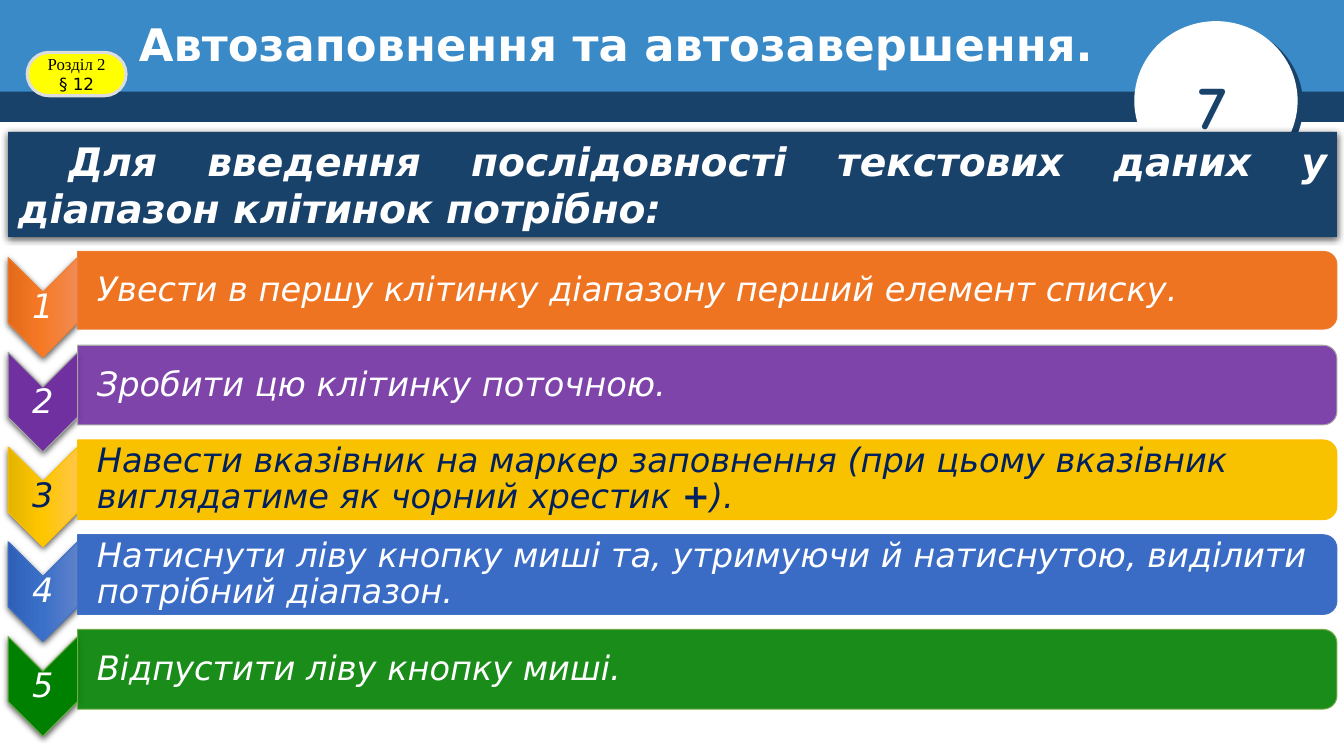
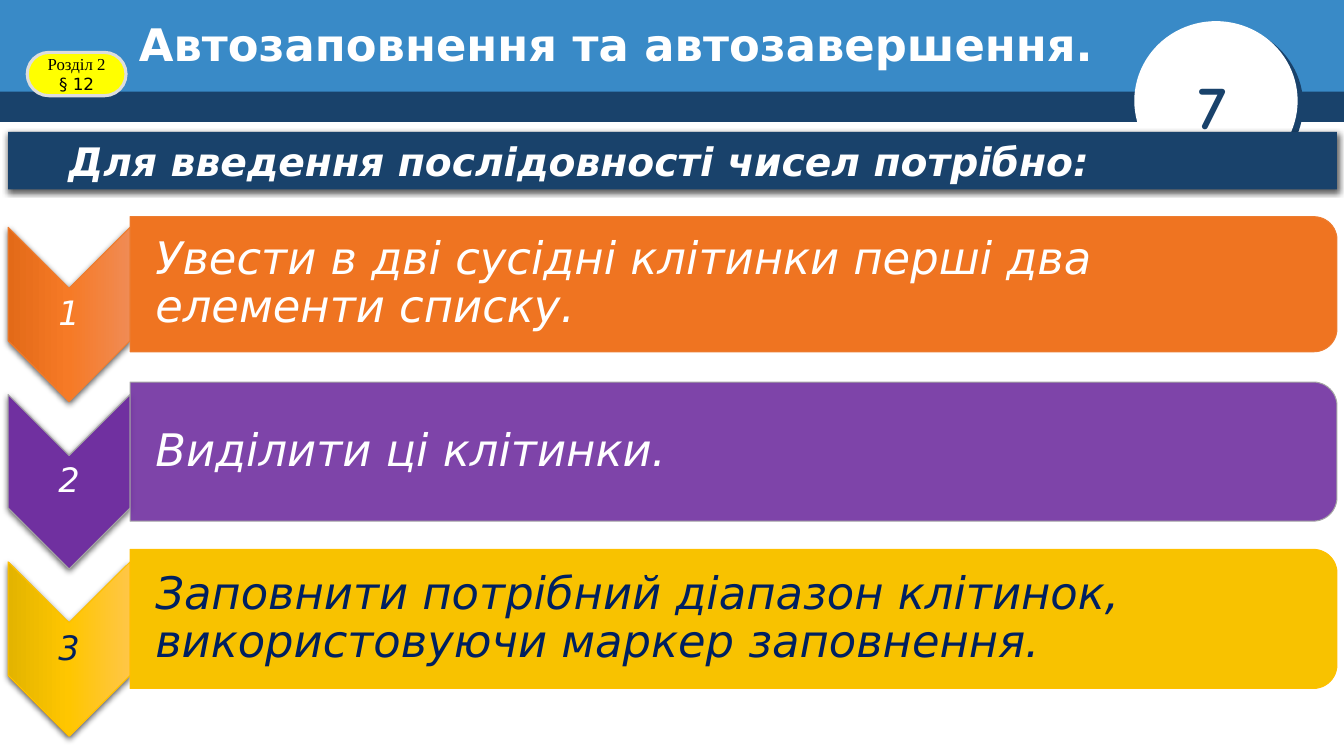
import copy

import lxml.etree
import pptx
import pptx.dml.color
import pptx.enum.shapes
import pptx.enum.text
import pptx.oxml.ns
import pptx.util

Inches = pptx.util.Inches
Pt = pptx.util.Pt
qn = pptx.oxml.ns.qn
rgb = pptx.dml.color.RGBColor.from_string
SHAPE = pptx.enum.shapes.MSO_SHAPE
ALIGN = pptx.enum.text.PP_ALIGN
ANCHOR = pptx.enum.text.MSO_ANCHOR


class Theme:
    navy, blue, white, black = "19426B", "398AC7", "FFFFFF", "000000"
    badge, badge_edge, dark_text = "FFFF00", "DDDDDD", "002060"
    sans, serif, number_face = "DejaVu Sans", "Times New Roman", "Comic Neue"
    title, heading, step_number, badge_text, slide_number = 32, 28, 24, 12, 44
    # colour, opacity %, blur pt, distance pt, direction in degrees
    soft_shadow = (black, 63, 4.5, 1.5, 90)
    circle_shadow = (navy, 100, 0, 5, 37)
    # arrow colours, bar colour, bar opacity %, edge, text
    steps = [
        (("F08B54", "F67A26", "E36A18"), "EF7421", 100, "ED7D31", white),
        (("7030A0",), "7030A0", 90, "A5A5A5", white),
        (("FFC647", "FFC600", "E3B400"), "F8C200", 100, "FFC000", dark_text),
        (("5E81C9", "3B70C9", "2E60B8"), "3A6CC6", 100, "4372C3", white),
        (("008000",), "008000", 90, "70AD47", white),
    ]


def add_block(slide, preset, box, colours, opacity=100, edge=None, edge_width=0.75,
              shadow=None, turned=False, adjustments=()):
    """Add a shape that covers box (inches) as seen, after any quarter turn."""
    left, top, width, height = box
    if turned:
        left, top = left + (width - height) / 2, top + (height - width) / 2
        width, height = height, width
    block = slide.shapes.add_shape(preset, *map(Inches, (left, top, width, height)))
    block.rotation = 90 if turned else 0
    for index, value in enumerate(adjustments):
        block.adjustments[index] = value
    properties = block._element.spPr

    if len(colours) == 1:
        block.fill.solid()
        block.fill.fore_color.rgb = rgb(colours[0])
        if opacity < 100:
            colour = properties.find(qn("a:solidFill"))[0]
            lxml.etree.SubElement(colour, qn("a:alpha"), val=str(opacity * 1000))
    else:
        block.fill.gradient()
        block.fill.gradient_angle = 270
        stops = properties.find(qn("a:gradFill")).find(qn("a:gsLst"))
        stops.append(copy.deepcopy(stops[0]))
        for index, stop in enumerate(block.fill.gradient_stops):
            stop.position = index / 2
            stop.color.rgb = rgb(colours[index])

    if edge:
        block.line.color.rgb = rgb(edge)
        block.line.width = Pt(edge_width)
    else:
        block.line.fill.background()

    block.shadow.inherit = False
    if shadow:
        shade, strength, blur, distance, direction = shadow
        outer = lxml.etree.SubElement(
            properties.find(qn("a:effectLst")), qn("a:outerShdw"),
            blurRad=str(Pt(blur)), dist=str(Pt(distance)),
            dir=str(direction * 60000), algn="ctr", rotWithShape="0")
        colour = lxml.etree.SubElement(outer, qn("a:srgbClr"), val=shade)
        lxml.etree.SubElement(colour, qn("a:alpha"), val=str(strength * 1000))
    return block


def write(target, runs, size, colour, align=ALIGN.LEFT, anchor=ANCHOR.MIDDLE,
          insets=(0.1, 0.05, 0.1, 0.05), spacing=1.0, italic=False):
    """Fill target with one paragraph of (text, font, bold) runs."""
    frame = target.text_frame
    frame.word_wrap = True
    frame.vertical_anchor = anchor
    (frame.margin_left, frame.margin_top,
     frame.margin_right, frame.margin_bottom) = map(Inches, insets)
    paragraph = frame.paragraphs[0]
    paragraph.alignment = align
    paragraph.line_spacing = spacing
    for text, face, bold in runs:
        run = paragraph.add_run()
        run.text = text
        run.font.name = face
        run.font.size = Pt(size)
        run.font.bold = bold
        run.font.italic = italic
        run.font.color.rgb = rgb(colour)
    return paragraph


# Sizes in inches; middle is the centre line of the first bar.
lessons = [
    dict(
        heading="Для введення послідовності текстових даних у діапазон клітинок потрібно:",
        heading_height=1.04, middle=2.88, pitch=0.94, bar_height=0.79, first_bar=0.77,
        arrow_width=0.69, arrow_height=0.99, arrow_drop=0.17, indent=0.19, size=24,
        steps=[
            [("Увести в першу клітинку діапазону перший елемент списку.", False)],
            [("Зробити цю клітинку поточною.", False)],
            [("Навести вказівник на маркер заповнення (при цьому вказівник "
              "виглядатиме як чорний хрестик ", False), ("+", True), (").", False)],
            [("Натиснути ліву кнопку миші та, утримуючи й натиснутою, "
              "виділити потрібний діапазон.", False)],
            [("Відпустити ліву кнопку миші.", False)],
        ]),
    dict(
        heading="Для введення послідовності чисел потрібно:",
        heading_height=0.57, middle=2.82, pitch=1.66, bar_height=1.38, first_bar=1.34,
        arrow_width=1.21, arrow_height=1.73, arrow_drop=0.3, indent=0.25, size=32,
        steps=[
            [("Увести в дві сусідні клітинки перші два елементи списку.", False)],
            [("Виділити ці клітинки.", False)],
            [("Заповнити потрібний діапазон клітинок, "
              "використовуючи маркер заповнення.", False)],
        ]),
]

margin, right_edge = 0.08, 13.26
tight = 0.02

deck = pptx.Presentation()
deck.slide_width, deck.slide_height = Inches(13.33), Inches(7.5)

for lesson in lessons:
    slide = deck.slides.add_slide(deck.slide_layouts[6])

    # Header shared by all slides
    add_block(slide, SHAPE.RECTANGLE, (0, 0.87, 13.33, 0.34), [Theme.navy])
    add_block(slide, SHAPE.RECTANGLE, (0, 0, 13.33, 0.91), [Theme.blue])
    add_block(slide, SHAPE.OVAL, (11.25, 0.21, 1.62, 1.58), [Theme.white],
              shadow=Theme.circle_shadow)
    slide_number = slide.shapes.add_textbox(
        Inches(11.79), Inches(0.62), Inches(0.83), Inches(0.84))
    write(slide_number, [("7", Theme.number_face, True)], Theme.slide_number,
          Theme.navy, anchor=ANCHOR.TOP)
    title = slide.shapes.add_textbox(
        Inches(1.28), Inches(0.18), Inches(9.9), Inches(0.58))
    write(title, [("Автозаповнення та автозавершення.", Theme.sans, True)],
          Theme.title, Theme.white, spacing=0.9)

    heading = add_block(
        slide, SHAPE.RECTANGLE,
        (margin, 1.31, right_edge - margin, lesson["heading_height"]),
        [Theme.navy], shadow=Theme.soft_shadow)
    heading_line = write(heading, [(lesson["heading"], Theme.sans, True)], Theme.heading,
                         Theme.white, ALIGN.JUSTIFY, ANCHOR.TOP, italic=True)
    heading_line._p.get_or_add_pPr().set("indent", str(Inches(0.5)))

    badge = add_block(slide, SHAPE.ROUNDED_RECTANGLE, (0.27, 0.52, 0.98, 0.43),
                      [Theme.badge], edge=Theme.badge_edge, edge_width=2.25,
                      adjustments=[0.5])
    write(badge, [("Розділ 2 ", Theme.serif, False), ("§ 12", Theme.sans, False)],
          Theme.badge_text, Theme.black, ALIGN.CENTER)

    # Numbered steps
    arrow_width, arrow_height = lesson["arrow_width"], lesson["arrow_height"]
    bar_left = margin + arrow_width
    bar_width = right_edge - bar_left
    for index, (parts, style) in enumerate(zip(lesson["steps"], Theme.steps)):
        arrow_colours, bar_colour, opacity, edge, text_colour = style
        middle = lesson["middle"] + index * lesson["pitch"]
        arrow_top = middle + lesson["arrow_drop"] - arrow_height / 2
        bar_height = lesson["bar_height"] if index else lesson["first_bar"]
        bar_top = middle - bar_height / 2

        add_block(slide, SHAPE.CHEVRON, (margin, arrow_top, arrow_width, arrow_height),
                  arrow_colours, edge=edge, shadow=Theme.soft_shadow, turned=True,
                  adjustments=[0.5])
        number = slide.shapes.add_textbox(
            Inches(margin), Inches(arrow_top), Inches(arrow_width), Inches(arrow_height))
        write(number, [(str(index + 1), Theme.sans, False)], Theme.step_number,
              text_colour, ALIGN.CENTER, insets=(tight,) * 4, spacing=0.9, italic=True)

        add_block(slide, SHAPE.ROUND_2_SAME_RECTANGLE,
                  (bar_left, bar_top, bar_width, bar_height), [bar_colour], opacity,
                  edge, turned=True, adjustments=[0.17, 0])
        step = slide.shapes.add_textbox(
            Inches(bar_left), Inches(bar_top), Inches(bar_width - 0.05),
            Inches(bar_height))
        write(step, [(text, Theme.sans, bold) for text, bold in parts], lesson["size"],
              text_colour, insets=(lesson["indent"], tight, tight, tight),
              spacing=0.9, italic=True)

deck.save("out.pptx")
